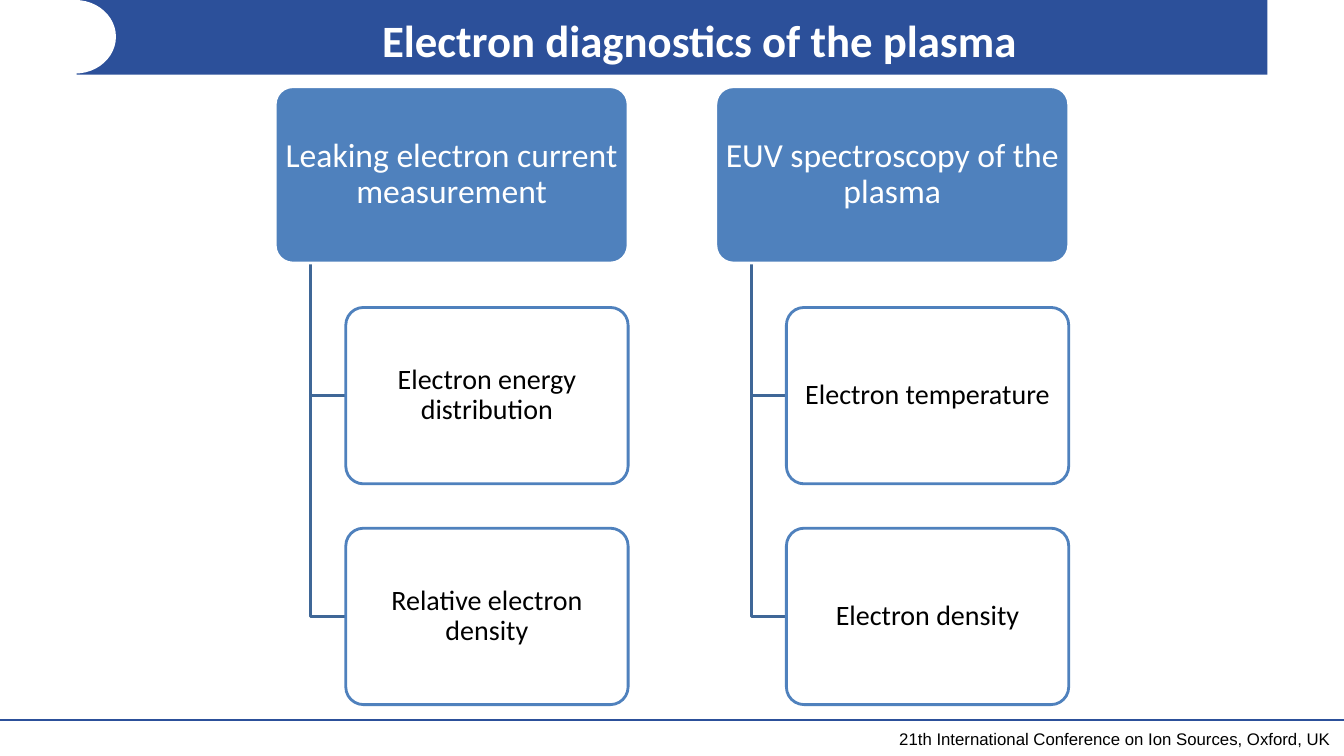
from pptx import Presentation
from pptx.dml.color import RGBColor
from pptx.enum.shapes import MSO_CONNECTOR, MSO_SHAPE
from pptx.enum.text import MSO_ANCHOR, PP_ALIGN
from pptx.oxml.ns import qn
from pptx.util import Inches, Pt
from lxml.etree import SubElement

NAVY = RGBColor(0x2C, 0x50, 0x9A)
BLUE = RGBColor(0x4F, 0x81, 0xBD)
STEEL = RGBColor(0x3F, 0x67, 0x97)
WHITE = RGBColor(0xFF, 0xFF, 0xFF)
BLACK = RGBColor(0x00, 0x00, 0x00)

deck = Presentation()
deck.slide_width = Inches(13.33)
deck.slide_height = Inches(7.5)
slide = deck.slides.add_slide(deck.slide_layouts[6])
shapes = slide.shapes


def add_block(kind, left, top, width, height, fill, line=None):
    block = shapes.add_shape(kind, Inches(left), Inches(top), Inches(width), Inches(height))
    block.shadow.inherit = False
    block.fill.solid()
    block.fill.fore_color.rgb = fill
    if line is None:
        block.line.fill.background()
    else:
        block.line.color.rgb = line
        block.line.width = Pt(2)
    return block


def set_text(shape, text, size, color, font="Calibri", align=PP_ALIGN.CENTER, space=0.9):
    frame = shape.text_frame
    frame.text = text
    frame.word_wrap = True
    frame.vertical_anchor = MSO_ANCHOR.MIDDLE
    para = frame.paragraphs[0]
    para.alignment = align
    para.line_spacing = space
    para.font.size = Pt(size)
    para.font.name = font
    para.font.color.rgb = color
    return para


# Header band with its rounded cut-out
add_block(MSO_SHAPE.RECTANGLE, 0, 0, 12.57, 0.74, NAVY)
add_block(MSO_SHAPE.OVAL, 0.34, 0, 0.81, 0.73, WHITE)
add_block(MSO_SHAPE.RECTANGLE, 0, 0, 0.76, 0.76, WHITE)
title = shapes.add_textbox(Inches(1.19), 0, Inches(11.5), Inches(0.73))
set_text(title, "Electron diagnostics of the plasma", 32, WHITE, space=1.1).font.bold = True

# Footer rule and conference name
rule = shapes.add_connector(MSO_CONNECTOR.STRAIGHT, 0, Inches(7.14), Inches(13.33), Inches(7.14))
rule.line.color.rgb = NAVY
rule.line.width = Pt(1.5)
SubElement(rule._element.spPr, qn("a:effectLst"))
foot = shapes.add_textbox(Inches(8.82), Inches(7.18), Inches(4.51), Inches(0.3))
set_text(foot, "21th International Conference on Ion Sources, Oxford, UK",
         12, BLACK, "Arial", PP_ALIGN.LEFT, 1.0)
foot.text_frame.word_wrap = False

# Two trees: a heading with two linked results each
TREES = [
    ("Leaking electron current measurement",
     ["Electron energy distribution", "Relative electron density"]),
    ("EUV spectroscopy of the plasma",
     ["Electron temperature", "Electron density"]),
]
TOP, HIGH, STEP = 0.86, 1.75, 2.19

for col, (head, leaves) in enumerate(TREES):
    left = 2.73 + 4.37 * col
    stem = left + 0.35
    edge = left + 0.7
    base = TOP + HIGH

    cards = [(head, left, TOP, 3.5, BLUE, WHITE, 24, WHITE)]
    for row, leaf in enumerate(leaves):
        y = 3.05 + STEP * row
        cards.append((leaf, edge, y, 2.8, WHITE, BLUE, 20, BLACK))

        # Elbow from the heading to the result
        mid = y + HIGH / 2
        path = shapes.build_freeform(Inches(stem), Inches(base))
        path.add_line_segments([(Inches(stem), Inches(mid)), (Inches(edge), Inches(mid))],
                               close=False)
        elbow = path.convert_to_shape()
        elbow.shadow.inherit = False
        elbow.fill.background()
        elbow.line.color.rgb = STEEL
        elbow.line.width = Pt(2)

    for text, x, y, wide, fill, line, size, color in cards:
        card = add_block(MSO_SHAPE.ROUNDED_RECTANGLE, x, y, wide, HIGH, fill, line)
        card.adjustments[0] = 0.1
        set_text(card, text, size, color)
        frame = card.text_frame
        frame.margin_left = frame.margin_right = Inches(0.04)
        frame.margin_top = frame.margin_bottom = Inches(0.03)

deck.save("out.pptx")
